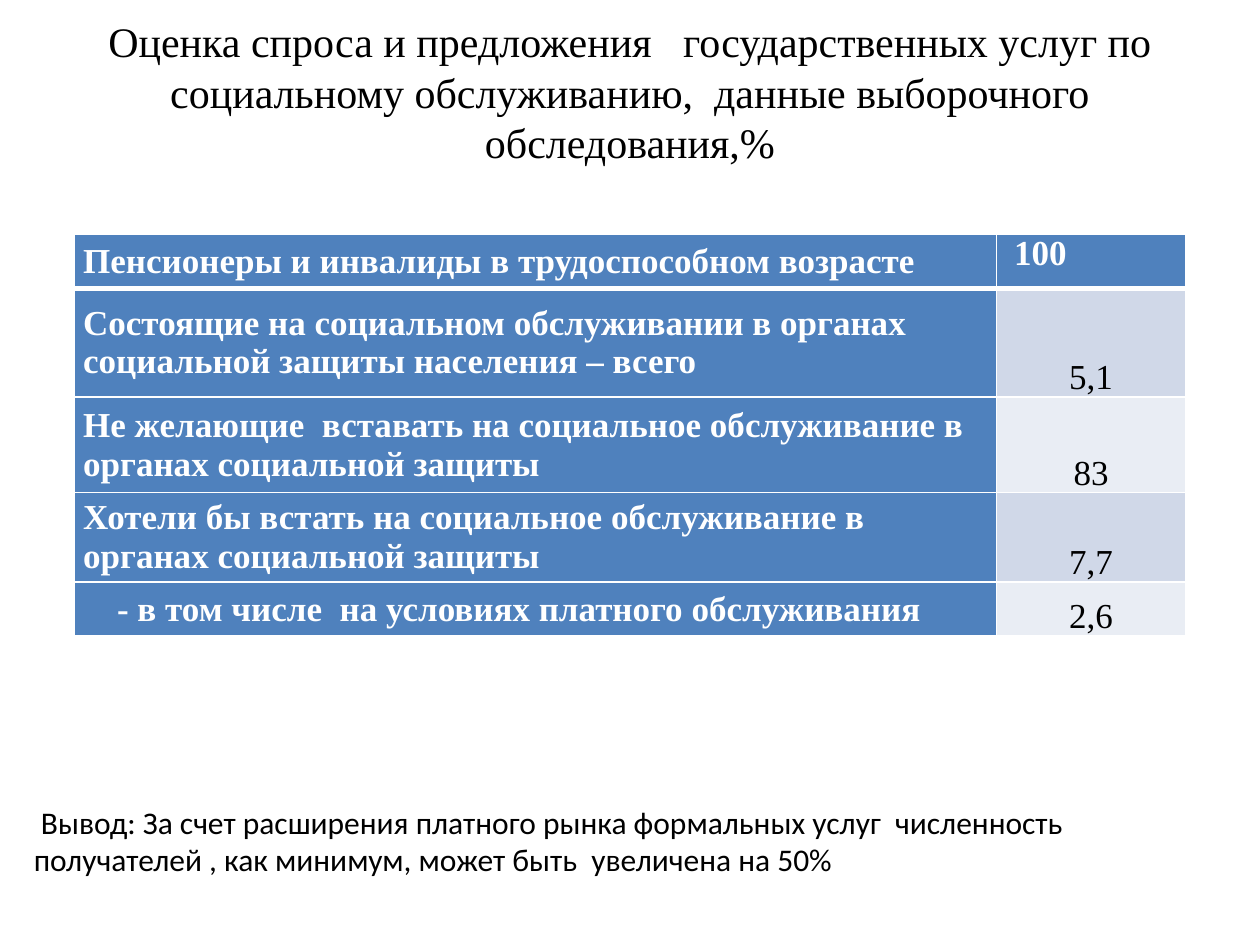
from lxml.etree import SubElement
from pptx import Presentation
from pptx.dml.color import RGBColor as RGB
from pptx.enum.text import MSO_ANCHOR as Anchor, PP_ALIGN as Align
from pptx.oxml.ns import qn
from pptx.util import Inches, Pt

COLORS = {"text": "000000", "white": "FFFFFF", "blue": "4F81BD",
          "dark": "D0D8E8", "light": "E9EDF4"}
SERIF = "Times New Roman"


def write(frame, text, size=20, font=SERIF, color="text", bold=False,
          align=Align.LEFT):
    frame.word_wrap = True
    par = frame.paragraphs[0]
    par.alignment = align
    run = par.add_run()
    run.text = text
    run.font.size = Pt(size)
    run.font.name = font
    run.font.bold = bold
    run.font.color.rgb = RGB.from_string(COLORS[color])


def add_edges(cell, widths):
    # Borders come before the fill in the cell properties
    props = cell._tc.get_or_add_tcPr()
    for side, width in widths.items():
        line = SubElement(props, qn(f"a:ln{side}"), w=str(Pt(width)))
        fill = SubElement(line, qn("a:solidFill"))
        SubElement(fill, qn("a:srgbClr"), val=COLORS["white"])


deck = Presentation()
deck.slide_width, deck.slide_height = Inches(10), Inches(7.5)
slide = deck.slides.add_slide(deck.slide_layouts[6])
shapes = slide.shapes

# Title, raised by its bottom margin
title = shapes.add_textbox(Inches(0.5), Inches(0.3), Inches(9), Inches(1.25))
frame = title.text_frame
frame.vertical_anchor = Anchor.MIDDLE
frame.margin_bottom = Inches(0.45)
write(frame, "Оценка спроса и предложения   государственных услуг по "
      "социальному обслуживанию,  данные выборочного обследования,%",
      size=24, align=Align.CENTER)

# Survey table: label, value, row height
rows = [
    ("Пенсионеры и инвалиды в трудоспособном возрасте", " 100", 0.43),
    ("Состоящие на социальном обслуживании в органах социальной защиты "
     "населения – всего", "5,1", 0.86),
    ("Не желающие  вставать на социальное обслуживание в органах "
     "социальной защиты", "83", 0.76),
    ("Хотели бы встать на социальное обслуживание в органах "
     "социальной защиты", "7,7", 0.71),
    (" - в том числе  на условиях платного обслуживания", "2,6", 0.43),
]
table = shapes.add_table(len(rows), 2, Inches(0.59), Inches(1.86),
                         Inches(8.82), Inches(3.19)).table
table.columns[0].width, table.columns[1].width = Inches(7.32), Inches(1.5)

for r, (label, value, height) in enumerate(rows):
    table.rows[r].height = Inches(height)
    head = r == 0
    last = r == len(rows) - 1
    for c, text in enumerate((label, value)):
        cell = table.cell(r, c)
        strong = head or c == 0
        add_edges(cell, {"L": 1, "R": 1, "T": 3 if r == 1 else 1,
                         "B": 3 if head else 1})
        cell.fill.solid()
        band = "blue" if strong else "dark" if r % 2 else "light"
        cell.fill.fore_color.rgb = RGB.from_string(COLORS[band])
        cell.margin_left = Inches(0.27 if last and c == 0 else 0.07)
        cell.margin_right = Inches(0.07)
        cell.margin_top = cell.margin_bottom = 0
        cell.vertical_anchor = (Anchor.MIDDLE if c == 0 else
                                Anchor.TOP if head else Anchor.BOTTOM)
        write(cell.text_frame, text, bold=strong,
              color="white" if strong else "text",
              align=Align.LEFT if strong else Align.CENTER)

# Conclusion
note = shapes.add_textbox(Inches(0.17), Inches(6.32), Inches(9.72), Inches(0.71))
write(note.text_frame, " Вывод: За счет расширения платного рынка формальных "
      "услуг  численность получателей , как минимум, может быть  увеличена "
      "на 50%", size=18, font="Calibri")

deck.save("out.pptx")
